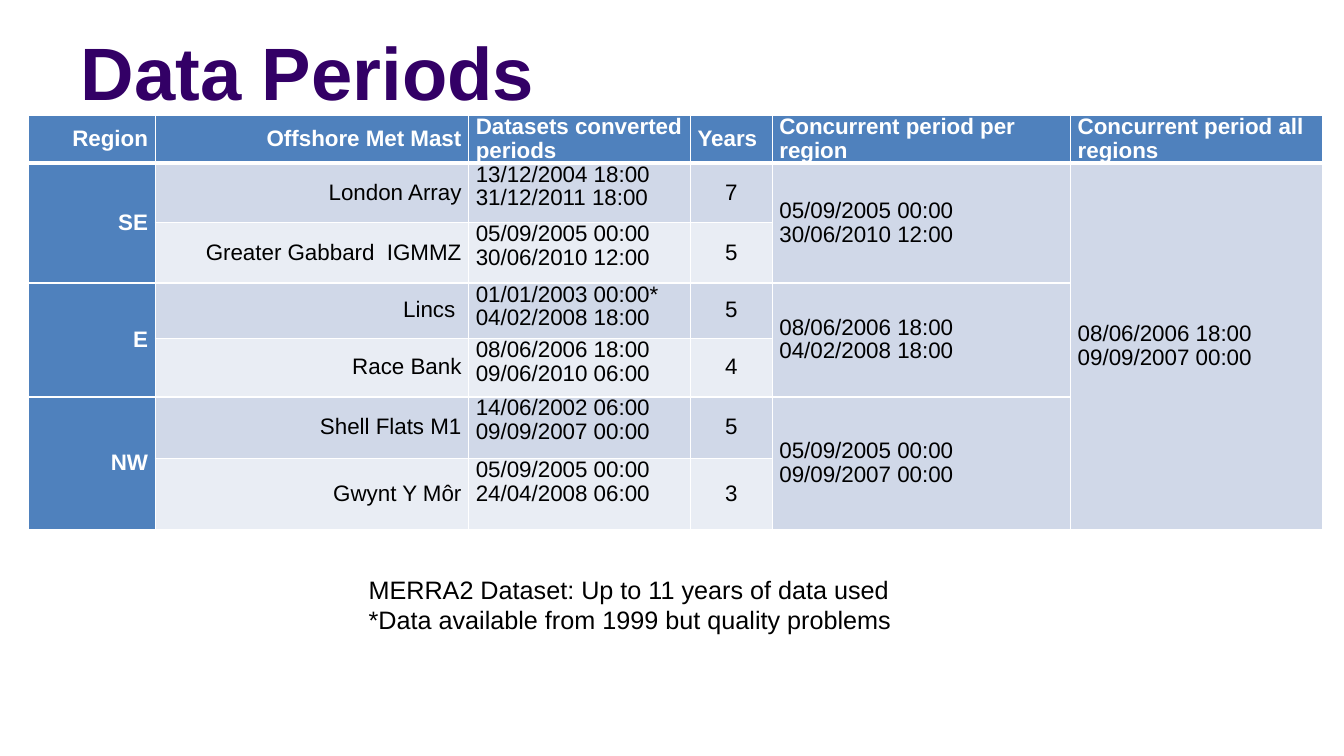
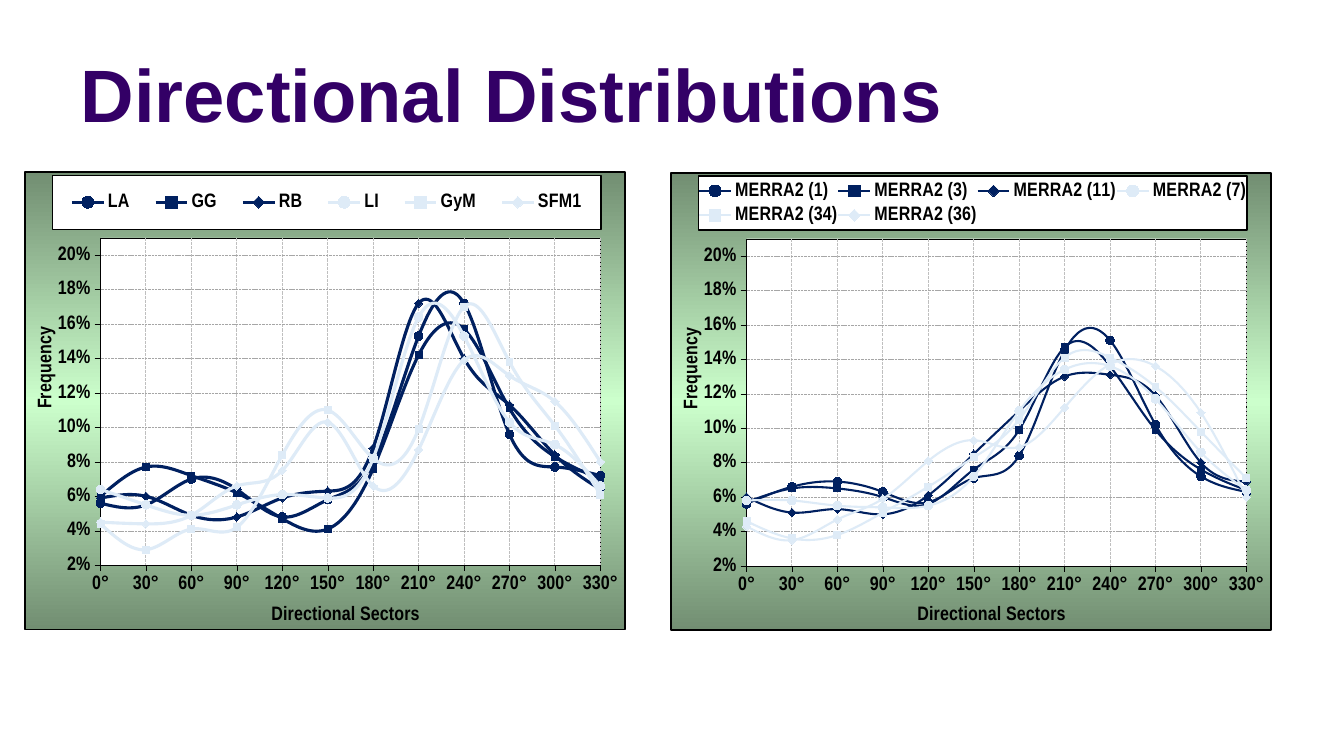
from dataclasses import dataclass
from pptx import Presentation
from pptx import util as u
from pptx.chart import data as cd
from pptx.dml.color import RGBColor
from pptx.enum import chart as ec, dml, text
from pptx.oxml import parse_xml
from pptx.oxml.ns import nsdecls, qn

Cm, Pt = u.Cm, u.Pt
ALIGN, ANCHOR = text.PP_ALIGN, text.MSO_ANCHOR


@dataclass(frozen=True)
class Theme:
    font: str = "Arial"
    chart_font: str = "Arial Narrow"
    title: str = "330066"
    ink: str = "000000"
    white: str = "FFFFFF"
    head: str = "4F81BD"
    bands: tuple = ("D0D8E8", "E9EDF4")
    navy: str = "002060"
    pale: str = "DEEBF7"
    chart_edge: str = "728E72"
    chart_mid: str = "CCFFCC"
    cat_grid: str = "BFBFBF"
    val_grid: str = "A6A6A6"
    title_size: float = 53
    note_size: float = 18
    table_size: float = 16
    chart_size: float = 14


T = Theme()

HEADERS = ["Region", "Offshore Met Mast", "Datasets converted periods", "Years",
           "Concurrent period per region", "Concurrent period all regions"]
MASTS = [
    ("London Array", "13/12/2004 18:00\n31/12/2011 18:00", "7"),
    ("Greater Gabbard  IGMMZ", "05/09/2005 00:00\n30/06/2010 12:00", "5"),
    ("Lincs ", "01/01/2003 00:00*\n04/02/2008 18:00", "5"),
    ("Race Bank", "08/06/2006 18:00\n09/06/2010 06:00", "4"),
    ("Shell Flats M1", "14/06/2002 06:00\n09/09/2007 00:00", "5"),
    ("Gwynt Y Môr", "05/09/2005 00:00\n24/04/2008 06:00", "3"),
]
REGIONS = [
    ("SE", "05/09/2005 00:00\n30/06/2010 12:00"),
    ("E", "08/06/2006 18:00\n04/02/2008 18:00"),
    ("NW", "05/09/2005 00:00\n09/09/2007 00:00"),
]
ALL_REGIONS = "08/06/2006 18:00\n09/09/2007 00:00"
COL_WIDTHS = [3.2, 7.9, 5.59, 2.06, 7.52, 6.35]
ROW_HEIGHTS = [0.94, 1.5, 1.52, 1.4, 1.47, 1.55, 1.8]

MAST_SERIES = {
    "LA": (0.056, 0.055, 0.07, 0.064, 0.048, 0.058, 0.08, 0.153, 0.172, 0.096, 0.077, 0.072),
    "GG": (0.06, 0.077, 0.072, 0.062, 0.047, 0.041, 0.076, 0.142, 0.157, 0.111, 0.083, 0.07),
    "RB": (0.059, 0.06, 0.049, 0.048, 0.059, 0.063, 0.088, 0.172, 0.14, 0.113, 0.084, 0.064),
    "LI": (0.064, 0.055, 0.049, 0.055, 0.061, 0.059, 0.082, 0.164, 0.153, 0.103, 0.09, 0.066),
    "GyM": (0.044, 0.029, 0.041, 0.042, 0.084, 0.11, 0.082, 0.099, 0.17, 0.138, 0.101, 0.061),
    "SFM1": (0.045, 0.044, 0.049, 0.066, 0.075, 0.103, 0.066, 0.087, 0.139, 0.13, 0.115, 0.08),
}
MERRA_SERIES = {
    "MERRA2 (1)": (0.056, 0.066, 0.069, 0.063, 0.057, 0.071, 0.084, 0.145, 0.151, 0.102, 0.072, 0.063),
    "MERRA2 (3)": (0.057, 0.065, 0.065, 0.06, 0.056, 0.076, 0.099, 0.147, 0.136, 0.099, 0.076, 0.064),
    "MERRA2 (11)": (0.06, 0.051, 0.053, 0.05, 0.061, 0.085, 0.11, 0.13, 0.131, 0.119, 0.08, 0.069),
    "MERRA2 (7)": (0.058, 0.058, 0.055, 0.054, 0.055, 0.072, 0.11, 0.134, 0.136, 0.117, 0.086, 0.064),
    "MERRA2 (34)": (0.046, 0.036, 0.038, 0.051, 0.066, 0.083, 0.105, 0.141, 0.141, 0.124, 0.098, 0.071),
    "MERRA2 (36)": (0.043, 0.035, 0.047, 0.059, 0.081, 0.093, 0.089, 0.112, 0.137, 0.136, 0.109, 0.06),
}


def rgb(color):
    return RGBColor.from_string(color)


def style_font(font, size, color=T.ink, bold=False, name=T.font):
    font.name, font.size, font.bold = name, Pt(size), bold
    font.color.rgb = rgb(color)


def write(tf, content, size, color=T.ink, bold=False, align=ALIGN.LEFT, spacing=None):
    for i, line in enumerate(content.split("\n")):
        p = tf.add_paragraph() if i else tf.paragraphs[0]
        p.alignment = align
        if spacing:
            p.line_spacing = spacing
        r = p.add_run()
        r.text = line
        style_font(r.font, size, color, bold)


def add_slide(prs, title, top):
    s = prs.slides.add_slide(prs.slide_layouts[5])
    sp = s.shapes.title
    sp.left, sp.top, sp.width, sp.height = Cm(1.7), Cm(top), Cm(30.48), Cm(3.18)
    tf = sp.text_frame
    tf.auto_size = text.MSO_AUTO_SIZE.NONE
    tf.vertical_anchor = ANCHOR.MIDDLE
    tf.margin_left = tf.margin_right = Cm(0.33)
    tf.margin_top = tf.margin_bottom = Cm(0.18)
    write(tf, title, T.title_size, T.title, True)
    return s


def add_note(s, content, left, top, width, height):
    tf = s.shapes.add_textbox(Cm(left), Cm(top), Cm(width), Cm(height)).text_frame
    tf.word_wrap = False
    write(tf, content, T.note_size)


def line_xml(tag, color, width):
    return (f'<a:{tag} {nsdecls("a")} w="{Pt(width)}"><a:solidFill>'
            f'<a:srgbClr val="{color}"/></a:solidFill></a:{tag}>')


def fill_cell(cell, content, fill, color=T.ink, bold=False, align=ALIGN.LEFT,
              anchor=ANCHOR.MIDDLE):
    cell.margin_left = cell.margin_right = Cm(0.18)
    cell.margin_top = cell.margin_bottom = 0
    cell.vertical_anchor = anchor
    cell.fill.solid()
    cell.fill.fore_color.rgb = rgb(fill)
    write(cell.text_frame, content, T.table_size, color, bold, align, 0.95)


def set_borders(cell, bottom):
    tcPr = cell._tc.get_or_add_tcPr()
    for i, (tag, width) in enumerate([("lnL", 1), ("lnR", 1), ("lnT", 1), ("lnB", bottom)]):
        tcPr.insert(i, parse_xml(line_xml(tag, T.white, width)))


def add_period_table(s, left, top):
    rows, cols = len(ROW_HEIGHTS), len(COL_WIDTHS)
    tbl = s.shapes.add_table(rows, cols, Cm(left), Cm(top), Cm(sum(COL_WIDTHS)),
                             Cm(sum(ROW_HEIGHTS))).table
    for col, width in zip(tbl.columns, COL_WIDTHS):
        col.width = Cm(width)
    for row, height in zip(tbl.rows, ROW_HEIGHTS):
        row.height = Cm(height)
    for c, header in enumerate(HEADERS):
        fill_cell(tbl.cell(0, c), header, T.head, T.white, True,
                  ALIGN.RIGHT if c < 2 else ALIGN.LEFT)
    for i, (mast, period, years) in enumerate(MASTS):
        band = T.bands[i % 2]
        fill_cell(tbl.cell(i + 1, 1), mast, band, align=ALIGN.RIGHT)
        fill_cell(tbl.cell(i + 1, 2), period, band, anchor=ANCHOR.TOP)
        fill_cell(tbl.cell(i + 1, 3), years, band, align=ALIGN.CENTER)
    for i, (region, period) in enumerate(REGIONS):
        first = 2 * i + 1
        for c in (0, 4):
            tbl.cell(first, c).merge(tbl.cell(first + 1, c))
        fill_cell(tbl.cell(first, 0), region, T.head, T.white, True, ALIGN.RIGHT)
        fill_cell(tbl.cell(first, 4), period, T.bands[0])
    tbl.cell(1, 5).merge(tbl.cell(rows - 1, 5))
    fill_cell(tbl.cell(1, 5), ALL_REGIONS, T.bands[0])
    for r in range(rows):
        for c in range(cols):
            set_borders(tbl.cell(r, c), 1 if r else 3)


def sp_pr(fill, border=None):
    line = line_xml("ln", T.ink, border) if border else ""
    return parse_xml(f'<c:spPr {nsdecls("c", "a")}>{fill}{line}</c:spPr>')


def solid_xml(color):
    return f'<a:solidFill><a:srgbClr val="{color}"/></a:solidFill>'


def gradient_xml(stops):
    gs = "".join(f'<a:gs pos="{pos * 1000}"><a:srgbClr val="{color}"/></a:gs>'
                 for pos, color in stops)
    return f'<a:gradFill><a:gsLst>{gs}</a:gsLst><a:lin ang="5400000" scaled="0"/></a:gradFill>'


def place(element, after, x, y, w=None, h=None, inner=False):
    old = element.find(qn("c:layout"))
    if old is not None:
        element.remove(old)
    target = '<c:layoutTarget val="inner"/>' if inner else ""
    size = f'<c:w val="{w}"/><c:h val="{h}"/>' if w else ""
    layout = parse_xml(
        f'<c:layout {nsdecls("c")}><c:manualLayout>{target}<c:xMode val="edge"/>'
        f'<c:yMode val="edge"/><c:x val="{x}"/><c:y val="{y}"/>{size}'
        '</c:manualLayout></c:layout>')
    if after:
        element.find(qn(after)).addnext(layout)
    else:
        element.insert(0, layout)


def style_axis(axis, title, x, y, grid, grid_width, turn):
    style_font(axis.tick_labels.font, T.chart_size, bold=True, name=T.chart_font)
    axis.major_tick_mark = ec.XL_TICK_MARK.OUTSIDE
    axis.format.line.color.rgb = rgb(T.ink)
    axis.format.line.width = Pt(0.25)
    axis.has_major_gridlines = True
    line = axis.major_gridlines.format.line
    line.color.rgb = rgb(grid)
    line.width = Pt(grid_width)
    line.dash_style = dml.MSO_LINE.SQUARE_DOT
    tf = axis.axis_title.text_frame
    r = tf.paragraphs[0].add_run()
    r.text = title
    style_font(r.font, T.chart_size, bold=True, name=T.chart_font)
    element = axis.axis_title._element
    body = next(element.iter(qn("a:bodyPr")))
    body.set("rot", str(turn * 60000))
    body.set("vert", "horz")
    place(element, "c:tx", x, y)


def style_series(ser, i, width):
    color = T.navy if i < 3 else T.pale
    style, size = [(ec.XL_MARKER_STYLE.CIRCLE, 6), (ec.XL_MARKER_STYLE.SQUARE, 5),
                   (ec.XL_MARKER_STYLE.DIAMOND, 6)][i % 3]
    ser.smooth = True
    ser.format.line.color.rgb = rgb(color)
    ser.format.line.width = Pt(width)
    ser.marker.style, ser.marker.size = style, size
    ser.marker.format.fill.solid()
    ser.marker.format.fill.fore_color.rgb = rgb(color)
    ser.marker.format.line.color.rgb = rgb(color)


def add_legend(chart):
    chart.has_legend = True
    legend = chart.legend
    legend.position = ec.XL_LEGEND_POSITION.TOP
    legend.include_in_layout = False
    style_font(legend.font, T.chart_size, bold=True, name=T.chart_font)
    element = legend._element
    place(element, "c:legendPos", 0.046, 0.007, 0.914, 0.118)
    element.find(qn("c:overlay")).addnext(sp_pr(solid_xml(T.white), 1))


def start_on_axis(val):
    element = val._element
    for old in element.findall(qn("c:crossBetween")):
        element.remove(old)
    cross = parse_xml(f'<c:crossBetween {nsdecls("c")} val="midCat"/>')
    anchor = element.find(qn("c:crosses"))
    if anchor is None:
        anchor = element.find(qn("c:crossAx"))
    anchor.addnext(cross)


def add_direction_chart(s, series, left, top, line_width):
    data = cd.CategoryChartData(number_format="0%")
    data.categories = [f"{angle}°" for angle in range(0, 360, 30)]
    for name, values in series.items():
        data.add_series(name, values)
    chart = s.shapes.add_chart(ec.XL_CHART_TYPE.LINE_MARKERS, Cm(left), Cm(top),
                               Cm(15.16), Cm(11.56), data).chart
    chart.has_title = False
    style_font(chart.font, 10.5)
    chart.plots[0].vary_by_categories = False
    for i, ser in enumerate(chart.plots[0].series):
        style_series(ser, i, line_width)
    style_axis(chart.category_axis, "Directional Sectors", 0.405, 0.935, T.cat_grid, 0.75, 0)
    val = chart.value_axis
    style_axis(val, "Frequency", 0.01, 0.33, T.val_grid, 0.25, -90)
    val.minimum_scale, val.maximum_scale, val.major_unit = 0.02, 0.21, 0.02
    val.tick_labels.number_format = "0%"
    val.tick_labels.number_format_is_linked = False
    start_on_axis(val)
    add_legend(chart)
    root = chart.element.find(qn("c:chart"))
    area = root.find(qn("c:plotArea"))
    place(area, None, 0.126, 0.144, 0.833, 0.716, inner=True)
    area.append(sp_pr(solid_xml(T.white), 0.25))
    stops = [(0, T.chart_edge), (50, T.chart_mid), (100, T.chart_edge)]
    root.addnext(sp_pr(gradient_xml(stops), 1))


def main():
    prs = Presentation()
    prs.slide_width, prs.slide_height = Cm(33.87), Cm(19.05)

    s = add_slide(prs, "Data Periods", 0.2)
    add_period_table(s, 0.71, 2.92)
    add_note(s, "MERRA2 Dataset: Up to 11 years of data used\n"
                "*Data available from 1999 but quality problems", 9.04, 14.35, 13.74, 1.8)

    s = add_slide(prs, "Directional Distributions", 0.76)
    add_direction_chart(s, MAST_SERIES, 0.61, 4.32, 2.25)
    add_direction_chart(s, MERRA_SERIES, 16.89, 4.34, 1.5)

    prs.save("out.pptx")


if __name__ == "__main__":
    main()
